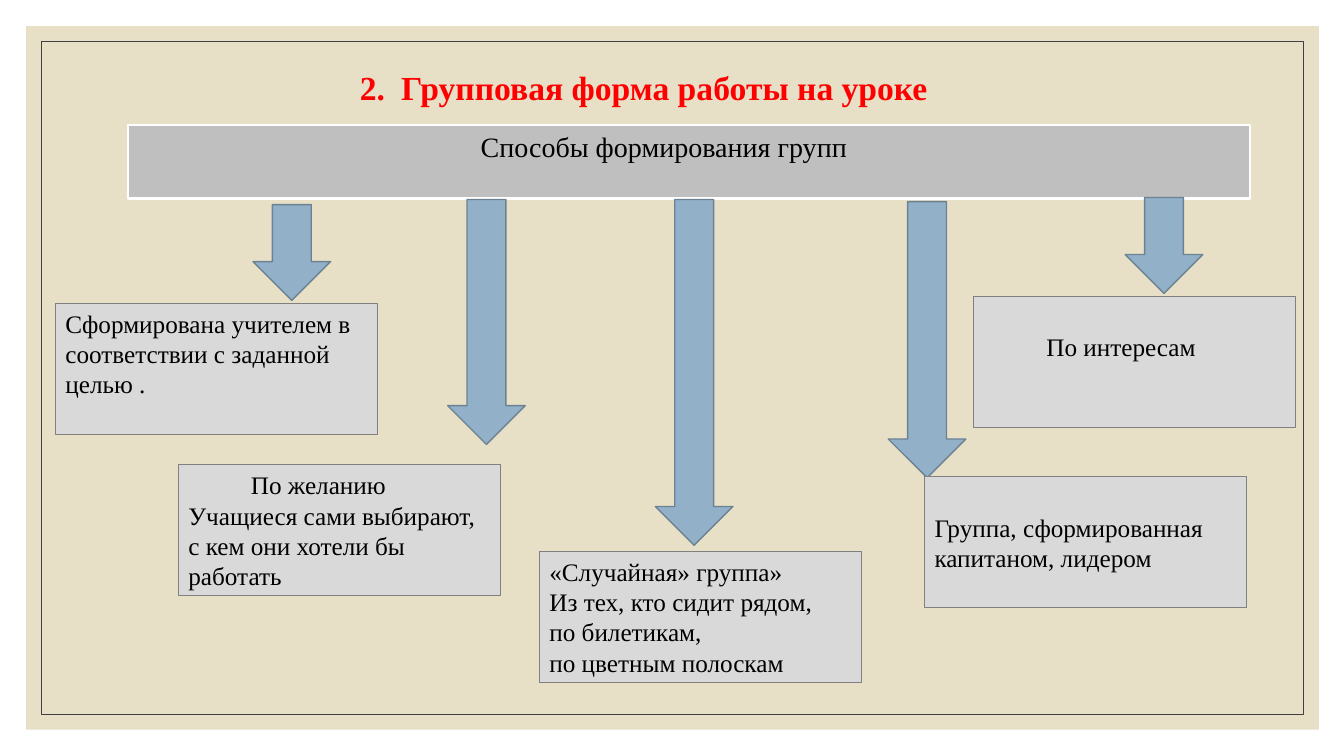
"""Build a slide on the ways of forming groups in a lesson."""
from dataclasses import dataclass

from lxml import etree
from pptx import Presentation
from pptx.dml.color import RGBColor
from pptx.enum.shapes import MSO_SHAPE
from pptx.enum.text import MSO_ANCHOR, PP_ALIGN
from pptx.oxml.ns import qn
from pptx.util import Inches, Pt

RECT, ARROW = MSO_SHAPE.RECTANGLE, MSO_SHAPE.DOWN_ARROW
TOP, LEFT = MSO_ANCHOR.TOP, PP_ALIGN.LEFT


@dataclass(frozen=True)
class Theme:
    """Colours, font and type sizes."""
    font: str = "Times New Roman"
    title: int = 24
    head: int = 20
    body: int = 18
    ink: str = "000000"
    red: str = "FF0000"
    white: str = "FFFFFF"
    sand: str = "E7E0C7"
    frame: str = "404040"
    bar: str = "BFBFBF"
    card: str = "D9D9D9"
    rim: str = "808080"
    blue: str = "92B0C8"
    edge: str = "6C8293"


@dataclass(frozen=True)
class Area:
    """A place on the slide, in inches."""
    left: float
    top: float
    width: float
    height: float


@dataclass(frozen=True)
class Way:
    """A way of forming groups: its arrow and its card."""
    arrow: tuple[float, float, float]
    card: tuple[float, float]
    lines: tuple[str, ...]
    indent: float = 0
    inset: float = 0.05


THEME = Theme()
ARROW_WIDTH = 0.77
CARD_SIZE = (3.19, 1.3)
WAYS = (
    Way((2.51, 2.03, 0.95), (0.55, 3.01),
        ("Сформирована учителем в соответствии с заданной целью .",)),
    Way((4.44, 1.98, 2.43), (1.77, 4.61),
        ("По желанию",
         "Учащиеся сами выбирают, с кем они хотели бы работать"), indent=0.62),
    Way((6.5, 1.98, 3.43), (5.35, 5.47),
        ("«Случайная» группа»", "Из тех, кто сидит рядом,",
         "по билетикам,", "по цветным полоскам")),
    Way((8.81, 2, 2.74), (9.17, 4.73),
        ("Группа, сформированная капитаном, лидером",), inset=0.35),
    Way((11.16, 1.96, 0.95), (9.66, 2.94),
        ("По интересам",), indent=0.62, inset=0.35),
)


def add_form(slide, kind, area: Area, fill: str = "", line: str = "",
             weight: float = 0):
    """Draw a preset shape; an empty colour means none."""
    form = slide.shapes.add_shape(kind, Inches(area.left), Inches(area.top),
                                  Inches(area.width), Inches(area.height))
    form.shadow.inherit = False
    if fill:
        form.fill.solid()
        form.fill.fore_color.rgb = RGBColor.from_string(fill)
    else:
        form.fill.background()
    if line:
        form.line.color.rgb = RGBColor.from_string(line)
        form.line.width = Pt(weight)
    else:
        form.line.fill.background()
    return form


def add_text(form, lines: tuple[str, ...], size: int, color: str = THEME.ink,
             bold: bool = False, indent: float = 0, inset: float = 0.05,
             tab: float = 0) -> None:
    """Write left-aligned lines; the indent is for the first one."""
    frame = form.text_frame
    frame.word_wrap = True
    frame.vertical_anchor = TOP
    frame.margin_top = Inches(inset)
    for index, line in enumerate(lines):
        para = frame.add_paragraph() if index else frame.paragraphs[0]
        para.text = line
        para.alignment = LEFT
        props = para._p.get_or_add_pPr()
        if indent and index == 0:
            props.set("marL", str(Inches(indent)))
        if tab:
            stops = etree.SubElement(props, qn("a:tabLst"))
            etree.SubElement(stops, qn("a:tab"), pos=str(Inches(tab)), algn="l")
        font = para.font
        font.name, font.size, font.bold = THEME.font, Pt(size), bold
        font.color.rgb = RGBColor.from_string(color)


def add_way(slide, way: Way) -> None:
    """Draw an arrow and the card it leads to."""
    left, top, height = way.arrow
    add_form(slide, ARROW, Area(left, top, ARROW_WIDTH, height),
             THEME.blue, THEME.edge, 1)
    card = add_form(slide, RECT, Area(*way.card, *CARD_SIZE),
                    THEME.card, THEME.rim)
    add_text(card, way.lines, THEME.body, indent=way.indent, inset=way.inset)


def main() -> None:
    """Build and save the slide."""
    deck = Presentation()
    deck.slide_width, deck.slide_height = Inches(13.33), Inches(7.5)
    slide = deck.slides.add_slide(deck.slide_layouts[6])
    add_form(slide, RECT, Area(0.26, 0.26, 12.82, 6.98), THEME.sand)
    add_form(slide, RECT, Area(0.41, 0.41, 12.52, 6.68),
             line=THEME.frame, weight=0.5)
    bar = add_form(slide, RECT, Area(1.27, 1.24, 11.13, 0.73),
                   THEME.bar, THEME.white, 1.5)
    add_text(bar, ("Способы формирования групп",), THEME.head, indent=3.4)
    for way in WAYS:
        add_way(slide, way)
    title = slide.shapes.add_textbox(Inches(3.47), Inches(0.61),
                                     Inches(6.54), Inches(0.5))
    add_text(title, ("2.\tГрупповая форма работы на уроке",), THEME.title,
             THEME.red, bold=True, tab=0.41)
    deck.save("out.pptx")


if __name__ == "__main__":
    main()
